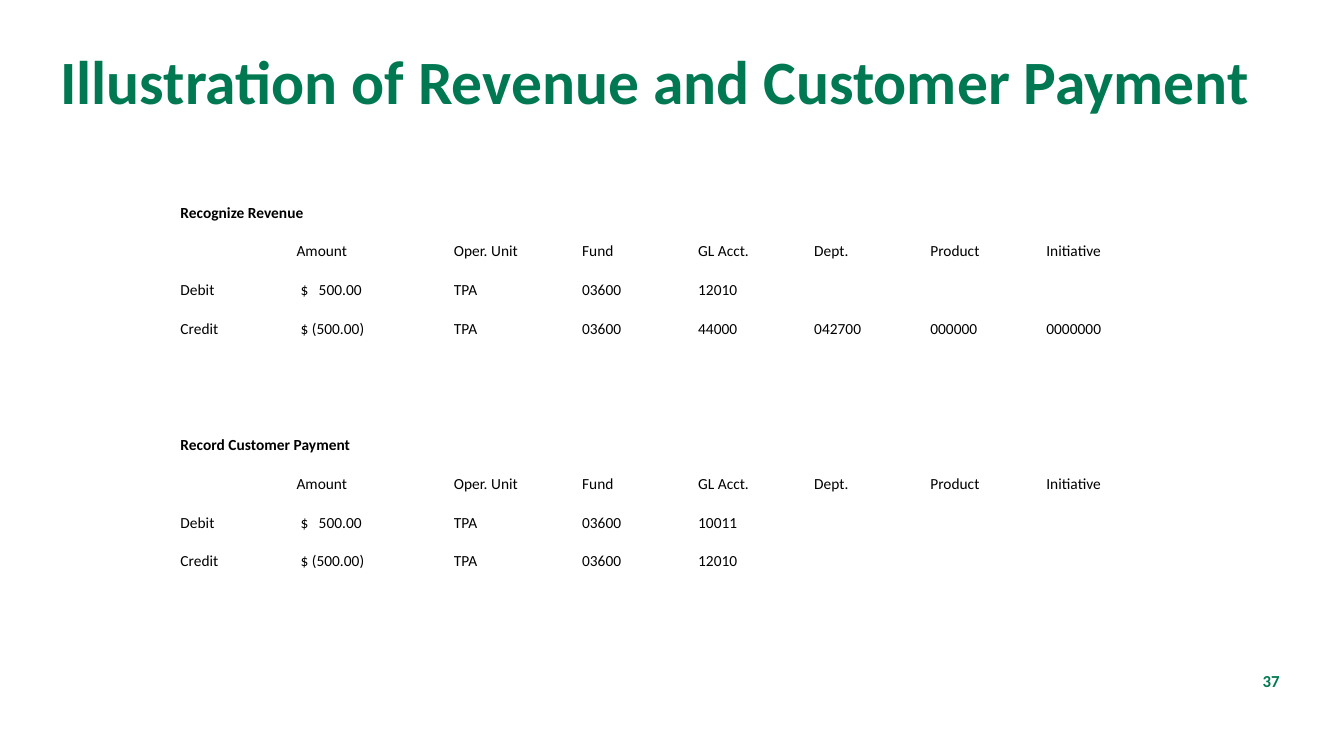
from lxml.etree import SubElement
from pptx import Presentation
from pptx.dml.color import RGBColor
from pptx.enum.text import MSO_ANCHOR, PP_ALIGN
from pptx.oxml.ns import qn
from pptx.util import Inches, Pt

GREEN, BLACK = "007851", "000000"
COLUMN_WIDTHS = [1.15, 1.22, 0.34, 1.27] + [1.15] * 5
ROW_COUNT = 10
HEADINGS = ["", "Amount", "", "Oper. Unit", "Fund", "GL Acct.", "Dept.", "Product", "Initiative"]
DEBIT = ["Debit", "$\t500.00", "", "TPA", "03600"]
CREDIT = ["Credit", "$ (500.00)", "", "TPA", "03600"]
# First row, heading, number of columns the heading spans, entries
JOURNALS = [
    (0, "Recognize Revenue", 2,
     [DEBIT + ["12010"], CREDIT + ["44000", "042700", "000000", "0000000"]]),
    (6, "Record Customer Payment", 4,
     [DEBIT + ["10011"], CREDIT + ["12010"]]),
]


def style_run(paragraph, size, color, bold):
    for run in paragraph.runs:
        run.font.name = "Calibri"
        run.font.size = Pt(size)
        run.font.bold = bold
        run.font.color.rgb = RGBColor.from_string(color)


def add_label(slide, text, left, top, width, height, size, anchor, align):
    """Add a bold green line of text and return its paragraph."""
    label = slide.shapes.add_textbox(Inches(left), Inches(top), Inches(width), Inches(height))
    label.text_frame.word_wrap = True
    label.text_frame.vertical_anchor = anchor
    paragraph = label.text_frame.paragraphs[0]
    paragraph.text = text
    paragraph.alignment = align
    style_run(paragraph, size, GREEN, True)
    return paragraph


def add_tab_stop(paragraph, position):
    tabs = SubElement(paragraph._p.get_or_add_pPr(), qn("a:tabLst"))
    SubElement(tabs, qn("a:tab"), pos=str(Inches(position)), algn="l")


def write_cell(cell, text, bold=False):
    paragraph = cell.text_frame.paragraphs[0]
    paragraph.text = text
    if text.startswith("$"):
        cell.margin_left = Inches(0.05)
        add_tab_stop(paragraph, 0.18)
    style_run(paragraph, 11, BLACK, bold)


def add_journal_table(slide, left, top, width, height):
    frame = slide.shapes.add_table(ROW_COUNT, len(COLUMN_WIDTHS), Inches(left), Inches(top),
                                   Inches(width), Inches(height))
    table = frame.table
    table.first_row = table.horz_banding = False
    for column, share in zip(table.columns, COLUMN_WIDTHS):
        column.width = Inches(width * share / sum(COLUMN_WIDTHS))
    for row in table.rows:
        row.height = Inches(height / ROW_COUNT)
    for cell in table.iter_cells():
        cell.fill.background()
        cell.vertical_anchor = MSO_ANCHOR.BOTTOM
        cell.margin_left = cell.margin_right = cell.margin_top = Inches(0.01)
        cell.margin_bottom = 0
    for first_row, heading, span, entries in JOURNALS:
        table.cell(first_row, 0).merge(table.cell(first_row, span - 1))
        write_cell(table.cell(first_row, 0), heading, bold=True)
        for row_index, values in enumerate([HEADINGS] + entries, first_row + 1):
            for column_index, value in enumerate(values):
                write_cell(table.cell(row_index, column_index), value)


def main():
    presentation = Presentation()
    presentation.slide_width = Inches(13.33)
    presentation.slide_height = Inches(7.5)
    slide = presentation.slides.add_slide(presentation.slide_layouts[6])
    title = add_label(slide, "Illustration of Revenue and Customer Payment",
                      0.5, 0.46, 12.29, 0.85, 44, MSO_ANCHOR.TOP, PP_ALIGN.LEFT)
    title.line_spacing = 0.9
    add_label(slide, "37", 11.86, 6.61, 0.93, 0.29, 12, MSO_ANCHOR.MIDDLE, PP_ALIGN.RIGHT)
    add_journal_table(slide, 1.78, 1.82, 9.74, 3.85)
    presentation.save("out.pptx")


if __name__ == "__main__":
    main()
